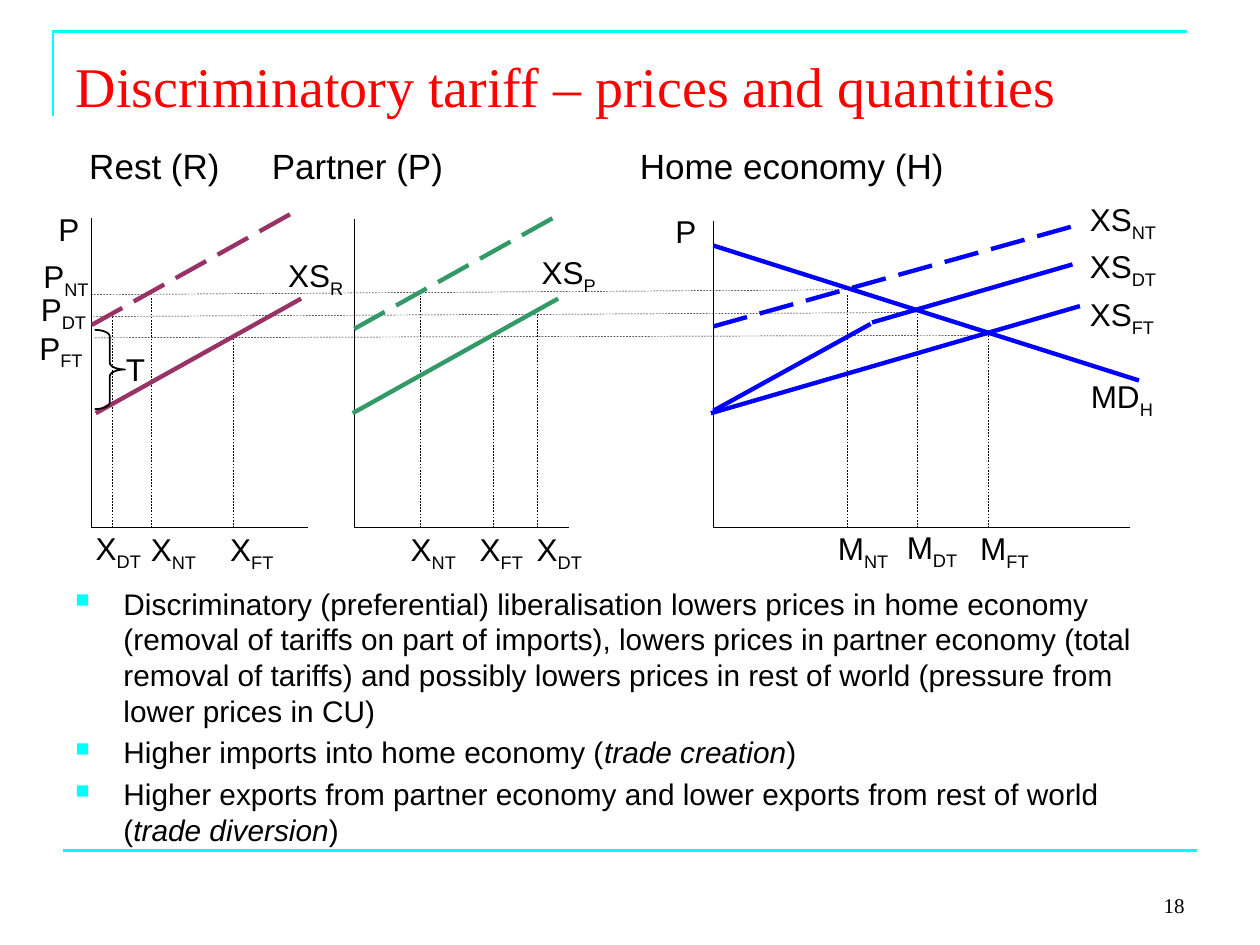
from lxml import etree
from pptx import Presentation
from pptx.dml.color import RGBColor
from pptx.enum.dml import MSO_LINE
from pptx.enum.shapes import MSO_CONNECTOR, MSO_SHAPE
from pptx.enum.text import MSO_ANCHOR, PP_ALIGN
from pptx.oxml.ns import qn
from pptx.util import Cm, Pt

LEFT, CENTER, RIGHT = PP_ALIGN.LEFT, PP_ALIGN.CENTER, PP_ALIGN.RIGHT
TOP, MIDDLE, BOTTOM = MSO_ANCHOR.TOP, MSO_ANCHOR.MIDDLE, MSO_ANCHOR.BOTTOM
DASH, LONG_DASH = MSO_LINE.DASH, MSO_LINE.LONG_DASH
STRAIGHT = MSO_CONNECTOR.STRAIGHT
BRACE = MSO_SHAPE.RIGHT_BRACE
TITLE_ONLY = 5
SANS, SERIF = "Arial", "Times New Roman"
BLACK, RED, CYAN = "000000", "FF0000", "00FFFF"
PLUM, GREEN, BLUE = "993366", "339966", "0000FF"
AXIS_Y = 10.64

AXES = [
    (1.85, 4.39, 1.85, AXIS_Y), (1.85, AXIS_Y, 6.2, AXIS_Y),
    (7.14, 4.42, 7.14, AXIS_Y), (7.14, AXIS_Y, 11.48, AXIS_Y),
    (14.38, 4.45, 14.38, AXIS_Y), (14.38, AXIS_Y, 22.78, AXIS_Y),
]
PRICE_GUIDES = [
    (1.83, 5.94, 17.09, 5.84),
    (1.88, 6.38, 18.47, 6.3),
    (1.91, 6.81, 19.91, 6.76),
]
QUANTITY_GUIDES = [
    (2.26, 6.35), (3.04, 5.99), (4.7, 6.81),
    (8.48, 5.97), (9.94, 6.81), (10.83, 6.35),
    (17.08, 5.92), (18.49, 6.3), (19.92, 6.73),
]
CURVES = [
    (PLUM, None, (1.93, 8.33, 6.07, 6.02)),
    (PLUM, LONG_DASH, (1.85, 6.55, 5.99, 4.24)),
    (GREEN, None, (7.11, 8.33, 11.25, 6.02)),
    (GREEN, LONG_DASH, (7.14, 6.63, 11.28, 4.32)),
    (BLUE, None, (14.38, 4.95, 22.96, 7.67)),
    (BLUE, None, (14.33, 8.33, 21.77, 6.17)),
    (BLUE, None, (14.38, 8.28, 17.55, 6.53)),
    (BLUE, None, (17.58, 6.5, 21.62, 5.33)),
    (BLUE, LONG_DASH, (14.38, 6.58, 21.67, 4.55)),
]
HEADINGS = [("Rest (R)", 1.55), ("Partner (P)", 5.23), ("Home economy (H)", 12.65)]
CURVE_LABELS = [
    ("XS_R", 5.56, 5.03), ("XS_P", 10.67, 4.98), ("XS_NT", 21.72, 3.91),
    ("XS_DT", 21.72, 4.85), ("XS_FT", 21.72, 5.82), ("MD_H", 21.74, 7.47),
]
QUANTITY_LABELS = [
    ("X_DT", 1.68, 10.54), ("X_NT", 2.79, 10.57), ("X_FT", 4.39, 10.57),
    ("X_NT", 8.03, 10.57), ("X_FT", 9.42, 10.57), ("X_DT", 10.57, 10.57),
    ("M_NT", 16.64, 10.54), ("M_DT", 18.03, 10.52), ("M_FT", 19.51, 10.54),
]
PRICE_LABELS = [
    ("P", 0.49, 4.11), ("P", 12.93, 4.14), ("T", 1.83, 6.93),
    ("P_NT", 0.43, 5.05), ("P_DT", 0.38, 5.72), ("P_FT", 0.33, 6.5),
]
BULLETS = [
    "Discriminatory (preferential) liberalisation lowers prices in home economy "
    "(removal of tariffs on part of imports), lowers prices in partner economy "
    "(total removal of tariffs) and possibly lowers prices in rest of world "
    "(pressure from lower prices in CU)",
    "Higher imports into home economy (*trade creation*)",
    "Higher exports from partner economy and lower exports from rest of world "
    "(*trade diversion*)",
]


def rgb(color):
    return RGBColor.from_string(color)


def write(p, text, size=18, font=SANS, color=BLACK, align=LEFT):
    p.alignment = align
    for i, part in enumerate(text.split("*")):
        for j, piece in enumerate(part.split("_")):
            r = p.add_run()
            r.text = piece
            r.font.size = Pt(size)
            r.font.name = font
            r.font.color.rgb = rgb(color)
            r.font.italic = i % 2 == 1
            if j:
                r.font._element.set("baseline", "-25000")


def add_box(s, x, y, w, h, anchor=TOP):
    tf = s.shapes.add_textbox(Cm(x), Cm(y), Cm(w), Cm(h)).text_frame
    tf.word_wrap = True
    tf.vertical_anchor = anchor
    return tf


def add_label(s, text, x, y, w=2.5, h=1.02, anchor=TOP, **fmt):
    write(add_box(s, x, y, w, h, anchor).paragraphs[0], text, **fmt)


def add_line(s, ends, color=BLACK, width=0.75, dash=None):
    c = s.shapes.add_connector(STRAIGHT, *[Cm(v) for v in ends])
    c.line.color.rgb = rgb(color)
    c.line.width = Pt(width)
    if dash is not None:
        c.line.dash_style = dash
    etree.SubElement(c._element.spPr, qn("a:effectLst"))


def outline(sp, color, width):
    sp.shadow.inherit = False
    sp.fill.background()
    sp.line.color.rgb = rgb(color)
    sp.line.width = Pt(width)


def add_frame(s):
    fb = s.shapes.build_freeform(Cm(1.07), Cm(2.34))
    fb.add_line_segments([(Cm(1.07), Cm(0.64)), (Cm(23.93), Cm(0.64))], close=False)
    outline(fb.convert_to_shape(), CYAN, 1.5)
    add_line(s, (1.27, 17.15, 24.13, 17.15), CYAN, 1.5)


def add_tariff_brace(s):
    sp = s.shapes.add_shape(BRACE, Cm(1.91), Cm(6.65), Cm(0.61), Cm(1.6))
    sp.adjustments[0] = 0.22
    sp.adjustments[1] = 0.5
    outline(sp, BLACK, 1)


def set_bullet(p):
    pPr = p._p.get_or_add_pPr()
    pPr.set("marL", str(Cm(0.97)))
    pPr.set("indent", str(-Cm(0.97)))
    clr = etree.SubElement(pPr, qn("a:buClr"))
    etree.SubElement(clr, qn("a:srgbClr"), val=CYAN)
    etree.SubElement(pPr, qn("a:buSzPct"), val="65000")
    etree.SubElement(pPr, qn("a:buChar"), char="■")


def add_bullets(s):
    tf = add_box(s, 1.27, 11.68, 22.86, 5.64)
    for i, text in enumerate(BULLETS):
        p = tf.add_paragraph() if i else tf.paragraphs[0]
        write(p, text, size=17)
        p.line_spacing = Pt(20.4)
        p.space_before = Pt(3.4)
        set_bullet(p)


def set_title(s, text):
    sp = s.shapes.title
    sp.left, sp.top, sp.width, sp.height = Cm(1.27), Cm(0.76), Cm(22.86), Cm(1.93)
    sp.text_frame.vertical_anchor = MIDDLE
    write(sp.text_frame.paragraphs[0], text, size=32, font=SERIF, color=RED)


def main():
    prs = Presentation()
    prs.slide_width, prs.slide_height = Cm(25.4), Cm(19.05)
    s = prs.slides.add_slide(prs.slide_layouts[TITLE_ONLY])
    add_frame(s)
    set_title(s, "Discriminatory tariff – prices and quantities")
    for ends in AXES:
        add_line(s, ends)
    for ends in PRICE_GUIDES:
        add_line(s, ends, width=0.25, dash=DASH)
    for x, top in QUANTITY_GUIDES:
        add_line(s, (x, AXIS_Y, x, top), width=0.25, dash=DASH)
    for color, dash, ends in CURVES:
        add_line(s, ends, color, 2.5, dash)
    add_tariff_brace(s)
    for text, x in HEADINGS:
        add_label(s, text, x, 2.79, w=8, h=1.09, size=20)
    for text, x, y in CURVE_LABELS + QUANTITY_LABELS:
        add_label(s, text, x, y)
    for text, x, y in PRICE_LABELS:
        add_label(s, text, x, y, w=1.8, align=CENTER)
    add_bullets(s)
    add_label(s, "18", 18.21, 17.35, w=5.92, h=1.27, anchor=BOTTOM,
              size=12, font=SERIF, align=RIGHT)
    prs.save("out.pptx")


if __name__ == "__main__":
    main()
